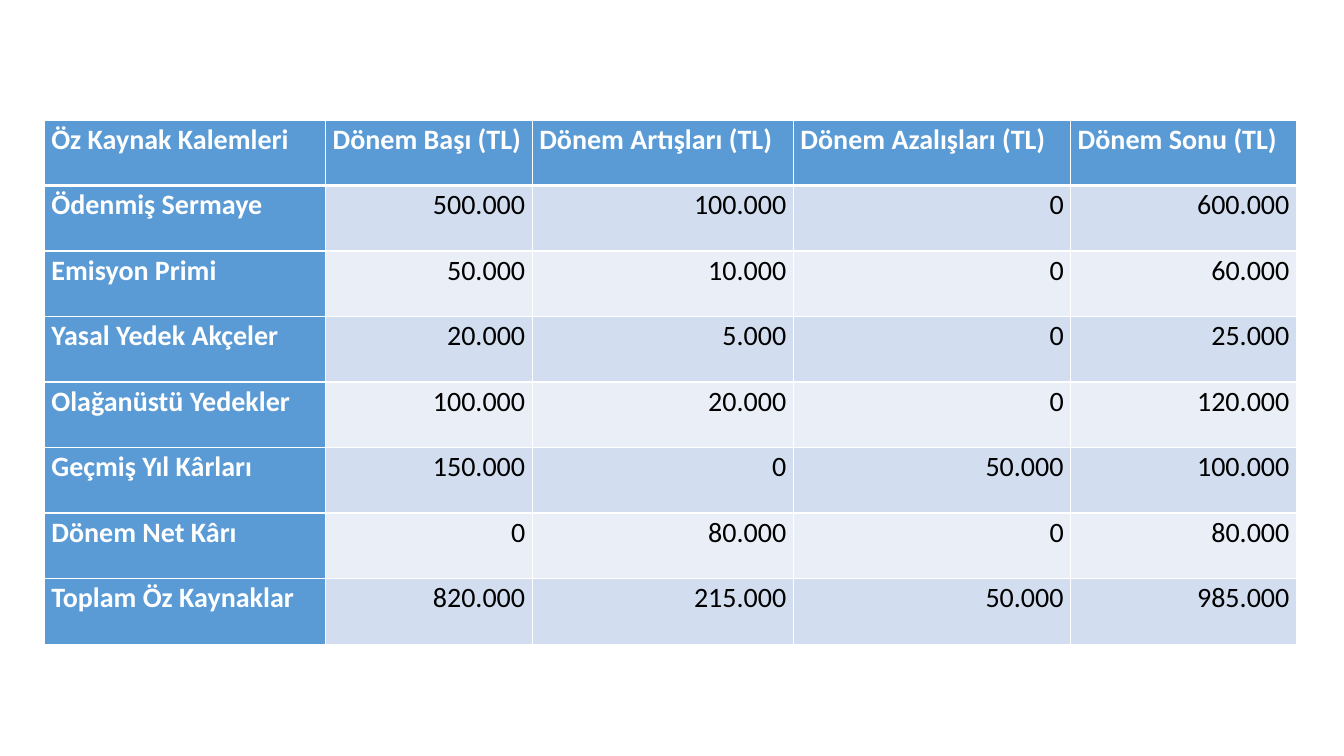
from pptx import Presentation
from pptx.dml.color import RGBColor
from pptx.enum.text import PP_ALIGN as Align
from pptx.oxml.ns import qn
from pptx.util import Inches, Pt
from lxml.etree import SubElement

WHITE, BLACK, BLUE = "FFFFFF", "000000", "5B9BD5"
BANDS = ["D2DEEF", "EAEFF7"]
COLUMN_WIDTHS = [2.79, 2.05, 2.59, 2.75, 2.24]
ROW_HEIGHT = 0.65
EQUITY_ROWS = [
    ["Öz Kaynak Kalemleri", "Dönem Başı (TL)", "Dönem Artışları (TL)",
     "Dönem Azalışları (TL)", "Dönem Sonu (TL)"],
    ["Ödenmiş Sermaye", "500.000", "100.000", "0", "600.000"],
    ["Emisyon Primi", "50.000", "10.000", "0", "60.000"],
    ["Yasal Yedek Akçeler", "20.000", "5.000", "0", "25.000"],
    ["Olağanüstü Yedekler", "100.000", "20.000", "0", "120.000"],
    ["Geçmiş Yıl Kârları", "150.000", "0", "50.000", "100.000"],
    ["Dönem Net Kârı", "0", "80.000", "0", "80.000"],
    ["Toplam Öz Kaynaklar", "820.000", "215.000", "50.000", "985.000"],
]


def color(value):
    return RGBColor.from_string(value)


class SlideBuilder:
    """Holds the text style and current page, and draws the table on it."""

    def __init__(self, page, font="Calibri", size=20):
        self.page, self.font, self.size = page, font, size

    def table(self, left, top, rows, widths, row_height):
        frame = self.page.shapes.add_table(
            len(rows), len(widths), Inches(left), Inches(top),
            Inches(sum(widths)), Inches(row_height * len(rows)))
        grid = frame.table
        for column, width in zip(grid.columns, widths):
            column.width = Inches(width)
        for row_index, texts in enumerate(rows):
            grid.rows[row_index].height = Inches(row_height)
            for column_index, text in enumerate(texts):
                cell = grid.cell(row_index, column_index)
                heading = row_index == 0 or column_index == 0
                self.borders(cell, top=3 if row_index == 1 else 1,
                             bottom=3 if row_index == 0 else 1)
                cell.fill.solid()
                cell.fill.fore_color.rgb = color(
                    BLUE if heading else BANDS[(row_index - 1) % 2])
                self.text(cell, text, heading)

    def borders(self, cell, top, bottom):
        properties = cell._tc.get_or_add_tcPr()
        for side, points in (("L", 1), ("R", 1), ("T", top), ("B", bottom)):
            line = SubElement(properties, qn(f"a:ln{side}"), w=str(Pt(points)))
            fill = SubElement(line, qn("a:solidFill"))
            SubElement(fill, qn("a:srgbClr"), val=WHITE)

    def text(self, cell, text, heading):
        cell.margin_left = cell.margin_right = Inches(0.07)
        cell.margin_top = cell.margin_bottom = 0
        para = cell.text_frame.paragraphs[0]
        para.alignment = Align.JUSTIFY if heading else Align.RIGHT
        para.line_spacing = 1.07
        span = para.add_run()
        span.text = text
        span.font.name = self.font
        span.font.size = Pt(self.size)
        span.font.bold = heading
        span.font.color.rgb = color(WHITE if heading else BLACK)


def main():
    deck = Presentation()
    deck.slide_width, deck.slide_height = Inches(13.33), Inches(7.5)
    builder = SlideBuilder(deck.slides.add_slide(deck.slide_layouts[6]))
    builder.table(0.44, 1.19, EQUITY_ROWS, COLUMN_WIDTHS, ROW_HEIGHT)
    deck.save("out.pptx")


if __name__ == "__main__":
    main()
